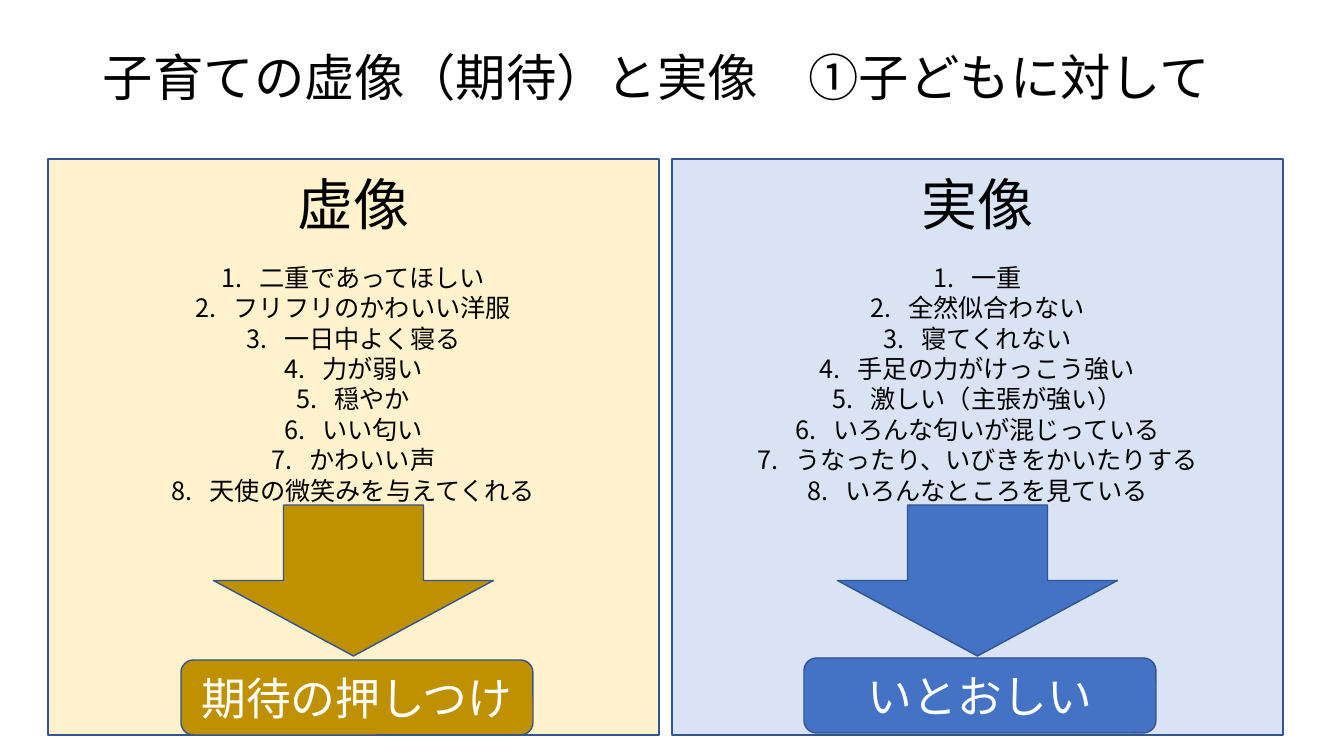
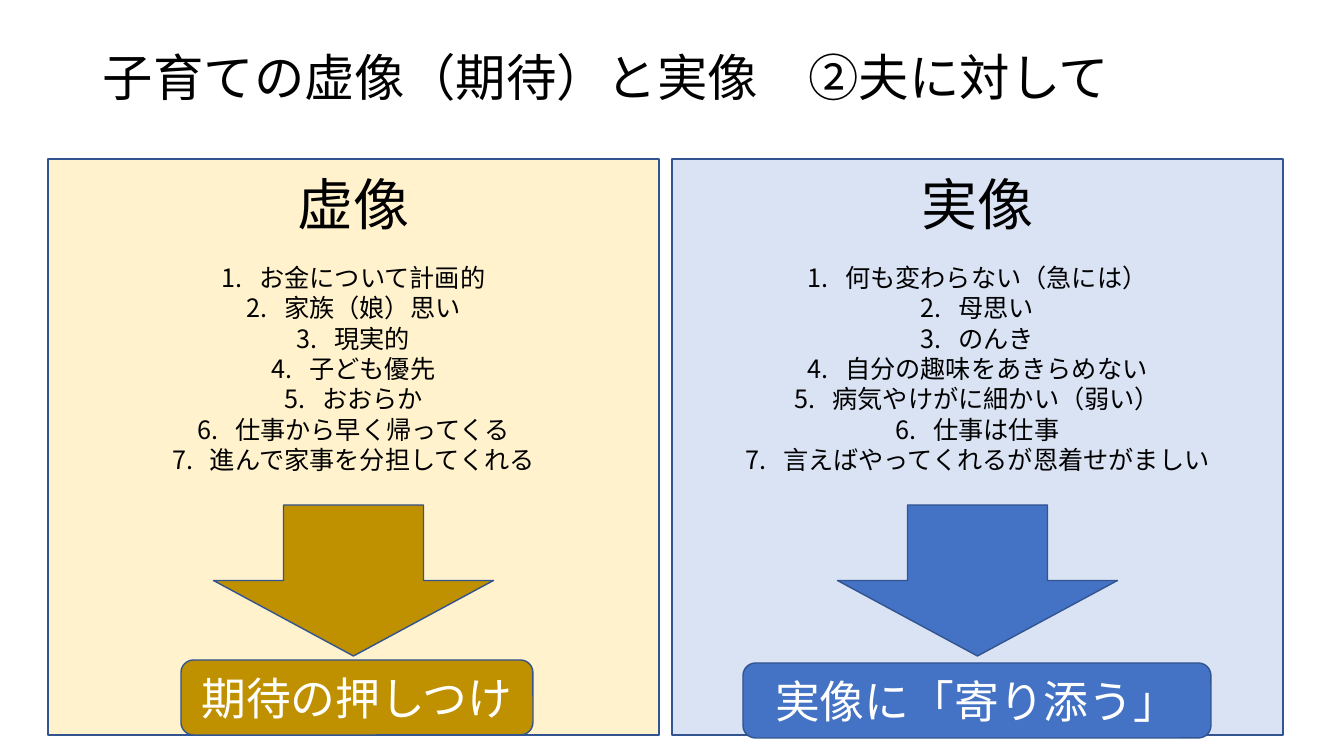
import lxml.etree
import pptx
import pptx.dml.color
import pptx.enum.shapes
import pptx.enum.text
import pptx.oxml.ns
import pptx.util

PX = 914400 / 100.8
FONT = "Noto Sans CJK JP"
COLORS = {
    "text": "000000",
    "white": "FFFFFF",
    "outline": "325491",
    "ideal_panel": "FFF2CC",
    "ideal_accent": "BF9000",
    "real_panel": "DAE3F3",
    "real_accent": "4472C4",
}
SHAPE = pptx.enum.shapes.MSO_SHAPE
ALIGN = pptx.enum.text.PP_ALIGN
ANCHOR = pptx.enum.text.MSO_ANCHOR

PANEL_TOP, PANEL_W, PANEL_H = 159, 611, 576
IDEAL_X, REAL_X = 48, 672
ARROW_W, ARROW_H, ARROW_DY = 280, 151, 346
LABEL_H = 75

# Each label is (text, x in panel, y in panel, width).
PUSHING = ("期待の押しつけ", 133, 501, 352)
SLIDES = [
    {
        "title": "子育ての虚像（期待）と実像　①子どもに対して",
        "ideal": ["二重であってほしい", "フリフリのかわいい洋服", "一日中よく寝る", "力が弱い",
                  "穏やか", "いい匂い", "かわいい声", "天使の微笑みを与えてくれる"],
        "real": ["一重", "全然似合わない", "寝てくれない", "手足の力がけっこう強い",
                 "激しい（主張が強い）", "いろんな匂いが混じっている",
                 "うなったり、いびきをかいたりする", "いろんなところを見ている"],
        "real_label": ("いとおしい", 132, 499, 352),
    },
    {
        "title": "子育ての虚像（期待）と実像　②夫に対して",
        "ideal": ["お金について計画的", "家族（娘）思い", "現実的", "子ども優先",
                  "おおらか", "仕事から早く帰ってくる", "進んで家事を分担してくれる"],
        "real": ["何も変わらない（急には）", "母思い", "のんき", "自分の趣味をあきらめない",
                 "病気やけがに細かい（弱い）", "仕事は仕事", "言えばやってくれるが恩着せがましい"],
        "real_label": ("実像に「寄り添う」", 71, 504, 468),
    },
]


def emu(*lengths):
    return [pptx.util.Emu(round(n * PX)) for n in lengths]


def rgb(name):
    return pptx.dml.color.RGBColor.from_string(COLORS[name])


def write(p, text, size, color="text", align=ALIGN.CENTER):
    p.text = text
    p.alignment = align
    for r in p.runs:
        r.font.size = pptx.util.Pt(size)
        r.font.color.rgb = rgb(color)
        r.font.name = FONT
        ea = lxml.etree.SubElement(r.font._element, pptx.oxml.ns.qn("a:ea"))
        ea.set("typeface", FONT)


def number(p):
    """Turn the paragraph into an item of a numbered list."""
    pPr = p._p.get_or_add_pPr()
    pPr.set("marL", "342900")
    pPr.set("indent", "-342900")
    bullet = lxml.etree.SubElement(pPr, pptx.oxml.ns.qn("a:buAutoNum"))
    bullet.set("type", "arabicPeriod")


def add_box(s, kind, x, y, w, h, fill):
    sp = s.shapes.add_shape(kind, *emu(x, y, w, h))
    sp.shadow.inherit = False
    sp.fill.solid()
    sp.fill.fore_color.rgb = rgb(fill)
    sp.line.color.rgb = rgb("outline")
    sp.line.width = pptx.util.Pt(1)
    sp.text_frame.word_wrap = True
    return sp


def add_title(s, text):
    tf = s.shapes.add_textbox(*emu(93, 40, 1159, 81)).text_frame
    tf.word_wrap = True
    tf.vertical_anchor = ANCHOR.MIDDLE
    write(tf.paragraphs[0], text, 36, align=ALIGN.LEFT)
    tf.paragraphs[0].line_spacing = 0.9


def add_panel(s, x, theme, heading, items, label):
    """Place a headed list with an arrow down to its concluding label."""
    y = PANEL_TOP
    accent = theme + "_accent"
    tf = add_box(s, SHAPE.RECTANGLE, x, y, PANEL_W, PANEL_H, theme + "_panel").text_frame
    tf.vertical_anchor = ANCHOR.TOP
    p = tf.paragraphs[0]
    write(p, heading, 40)
    p.line_spacing = pptx.util.Pt(52)
    p.space_after = pptx.util.Pt(18)
    for item in items:
        p = tf.add_paragraph()
        write(p, item, 18)
        p.line_spacing = pptx.util.Pt(21.7)
        number(p)

    add_box(s, SHAPE.DOWN_ARROW, x + (PANEL_W - ARROW_W) / 2, y + ARROW_DY,
            ARROW_W, ARROW_H, accent)

    text, dx, dy, width = label
    tf = add_box(s, SHAPE.ROUNDED_RECTANGLE, x + dx, y + dy, width, LABEL_H, accent).text_frame
    tf.vertical_anchor = ANCHOR.MIDDLE
    write(tf.paragraphs[0], text, 32, "white")


def main():
    prs = pptx.Presentation()
    prs.slide_width, prs.slide_height = emu(1344, 756)
    for content in SLIDES:
        s = prs.slides.add_slide(prs.slide_layouts[6])
        add_title(s, content["title"])
        add_panel(s, IDEAL_X, "ideal", "虚像", content["ideal"], PUSHING)
        add_panel(s, REAL_X, "real", "実像", content["real"], content["real_label"])
    prs.save("out.pptx")


if __name__ == "__main__":
    main()
